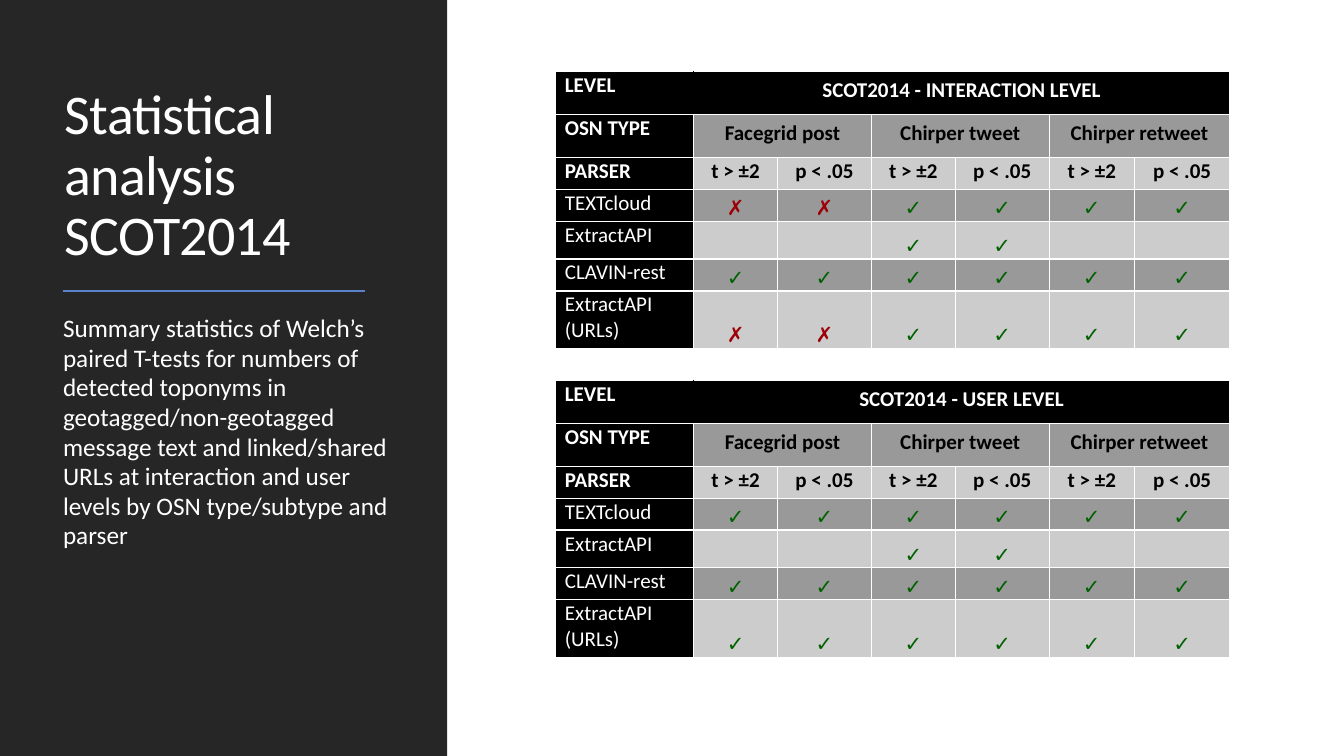
from pptx import Presentation
from pptx.dml.color import RGBColor as Color
from pptx.enum.shapes import MSO_CONNECTOR as Connector, MSO_SHAPE as Shape
from pptx.enum.text import MSO_ANCHOR as Anchor, MSO_AUTO_SIZE as AutoSize, PP_ALIGN as Align
from pptx.oxml.ns import qn
from pptx.util import Pt
from lxml.etree import SubElement

COLORS = {
    "panel": "262626", "white": "FFFFFF", "black": "000000", "rule": "5A82CB",
    "dark": "999999", "light": "CCCCCC", "yes": "006100", "no": "9C0006",
}
COLUMNS = [98.5, 60, 67, 60, 67, 61, 68]
BLOCK_ROWS = [30.75, 30.75, 22.8, 22.8, 27, 22.8, 41]
SPACER = 22.8
NETWORKS = ["Facegrid post", "Chirper tweet", "Chirper retweet"]
PARSERS = ["TEXTcloud", "ExtractAPI", "CLAVIN-rest", "ExtractAPI (URLs)"]
LEVELS = [
    ("SCOT2014 - INTERACTION LEVEL", ["✗✗✓✓✓✓", "  ✓✓  ", "✓✓✓✓✓✓", "✗✗✓✓✓✓"]),
    ("SCOT2014 - USER LEVEL", ["✓✓✓✓✓✓", "  ✓✓  ", "✓✓✓✓✓✓", "✓✓✓✓✓✓"]),
]


class SlideBuilder:
    font = "Calibri"

    def __init__(self, page):
        self.page = page

    def color(self, name):
        return Color.from_string(COLORS[name])

    def style(self, para, size, color, bold=False):
        for span in para.runs:
            span.font.name = self.font
            span.font.size = Pt(size)
            span.font.bold = bold
            span.font.color.rgb = self.color(color)

    def place(self, box, left, top, width, height):
        box.left, box.top, box.width, box.height = map(Pt, (left, top, width, height))

    def panel(self, left, top, width, height):
        box = self.page.shapes.add_shape(Shape.RECTANGLE, *map(Pt, (left, top, width, height)))
        box.shadow.inherit = False
        box.fill.solid()
        box.fill.fore_color.rgb = self.color("panel")
        box.line.fill.background()
        self.page.shapes.title._element.addprevious(box._element)

    def placeholder(self, box, text, area, size, anchor, spacing):
        self.place(box, *area)
        frame = box.text_frame
        frame.text = text
        frame.word_wrap = True
        frame.auto_size = AutoSize.NONE
        frame.vertical_anchor = anchor
        para = frame.paragraphs[0]
        para.alignment = Align.LEFT
        para.line_spacing = spacing
        para.space_before = Pt(0)
        self.style(para, size, "white")
        return frame

    def title(self, text, *area):
        frame = self.placeholder(self.page.shapes.title, text, area, 40, Anchor.BOTTOM, 0.9)
        for span in frame.paragraphs[0].runs:
            span.font._element.set("spc", "-50")

    def body(self, text, *area):
        frame = self.placeholder(self.page.placeholders[1], text, area, 18, Anchor.TOP, 0.98)
        frame.margin_left = frame.margin_right = 0
        properties = frame.paragraphs[0]._p.get_or_add_pPr()
        properties.set("marL", "0")
        properties.set("indent", "0")
        SubElement(properties, qn("a:buNone"))

    def rule(self, left, top, right):
        line = self.page.shapes.add_connector(Connector.STRAIGHT, Pt(left), Pt(top), Pt(right), Pt(top))
        line.line.color.rgb = self.color("rule")
        line.line.width = Pt(1.5)
        SubElement(line._element.spPr, qn("a:effectLst"))

    def borders(self, cell, black_side=None):
        properties = cell._tc.get_or_add_tcPr()
        for index, side in enumerate(("lnL", "lnR", "lnT", "lnB")):
            line = properties.makeelement(qn(f"a:{side}"), {"w": str(Pt(1))})
            fill = SubElement(line, qn("a:solidFill"))
            name = "black" if side == black_side else "white"
            SubElement(fill, qn("a:srgbClr"), val=COLORS[name])
            properties.insert(index, line)

    def cell(self, cell, text, fill, color="white", bold=False, align=Align.CENTER,
             anchor=Anchor.TOP, margins=(6.5, 0.7, 6.5, 0)):
        cell.margin_left, cell.margin_top, cell.margin_right, cell.margin_bottom = map(Pt, margins)
        cell.vertical_anchor = anchor
        cell.fill.solid()
        cell.fill.fore_color.rgb = self.color(fill)
        if text:
            para = cell.text_frame.paragraphs[0]
            para.text = text
            para.alignment = align
            self.style(para, 15, color, bold)

    def heading(self, table, row, column, width, text, fill, color):
        first = table.cell(row, column)
        first.merge(table.cell(row, column + width - 1))
        self.cell(first, text, fill, color, True, margins=(9.4, 4.3, 9.4, 4.3))

    def level_block(self, table, top, level, results):
        labels = ["LEVEL", "OSN TYPE", "PARSER"] + PARSERS
        for offset, label in enumerate(labels):
            self.cell(table.cell(top + offset, 0), label, "black", bold=offset < 3, align=Align.LEFT)
        self.heading(table, top, 1, 6, level, "black", "white")
        for index, network in enumerate(NETWORKS):
            self.heading(table, top + 1, 1 + 2 * index, 2, network, "dark", "black")
        for column in range(1, 7):
            measure = "t > ±2" if column % 2 else "p < .05"
            self.cell(table.cell(top + 2, column), measure, "light", "black", True)
        for offset, marks in enumerate(results):
            fill = "light" if offset % 2 else "dark"
            for column, mark in enumerate(marks, 1):
                color = "no" if mark == "✗" else "yes"
                self.cell(table.cell(top + 3 + offset, column), mark.strip(), fill, color, anchor=Anchor.BOTTOM)

    def results_table(self, left, top):
        heights = BLOCK_ROWS + [SPACER] + BLOCK_ROWS
        frame = self.page.shapes.add_table(
            len(heights), len(COLUMNS), Pt(left), Pt(top), Pt(sum(COLUMNS)), Pt(sum(heights)))
        table = frame.table
        table.first_row = table.horz_banding = False
        for column, width in zip(table.columns, COLUMNS):
            column.width = Pt(width)
        for row, height in zip(table.rows, heights):
            row.height = Pt(height)
        for cell in table.iter_cells():
            self.cell(cell, "", "white")
        block = len(BLOCK_ROWS) + 1
        for index, (level, results) in enumerate(LEVELS):
            self.level_block(table, index * block, level, results)
        for row in range(len(heights)):
            for column in range(len(COLUMNS)):
                black_side = {0: "lnR", 1: "lnL"}.get(column) if row % block == 0 else None
                self.borders(table.cell(row, column), black_side)


def main():
    deck = Presentation()
    deck.slide_width, deck.slide_height = Pt(960), Pt(540)
    page = deck.slides.add_slide(deck.slide_layouts[1])
    builder = SlideBuilder(page)
    builder.panel(0, 0, 319.5, 540)
    builder.title("Statistical analysis SCOT2014", 39, 41, 242.5, 154)
    builder.rule(45, 208, 261)
    builder.body(
        "Summary statistics of Welch’s paired T-tests for numbers of detected toponyms in "
        "geotagged/non-geotagged message text and linked/shared URLs at interaction and user "
        "levels by OSN type/subtype and parser", 45, 220.5, 237, 251)
    builder.results_table(397, 51)
    deck.save("out.pptx")


if __name__ == "__main__":
    main()
